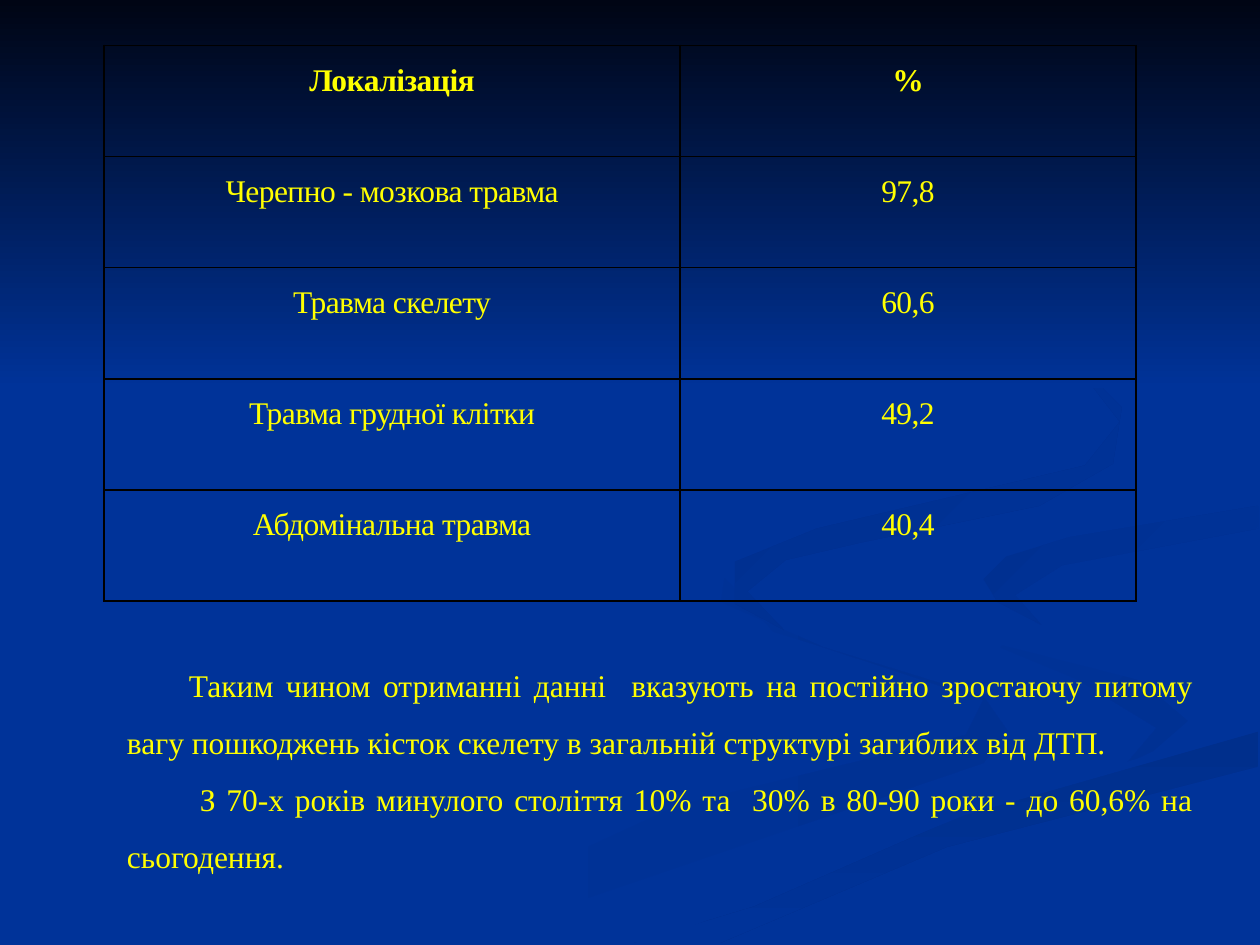
from lxml.etree import SubElement
from pptx import Presentation
from pptx.dml.color import RGBColor
from pptx.enum.text import MSO_AUTO_SIZE, PP_ALIGN
from pptx.oxml.ns import qn
from pptx.util import Pt

BLUE = RGBColor(0x00, 0x33, 0x99)
NIGHT = RGBColor(0x00, 0x05, 0x14)
DIM = RGBColor(0x00, 0x31, 0x93)
DEEP = RGBColor(0x00, 0x2F, 0x8C)
SHADE = RGBColor(0x00, 0x30, 0x91)
DUSK = RGBColor(0x00, 0x2F, 0x8E)
YELLOW = RGBColor(0xFF, 0xFF, 0x00)
BLACK = RGBColor(0x00, 0x00, 0x00)
FONT = "Times New Roman"

ROWS = [
    ("Локалізація", "%"),
    ("Черепно - мозкова травма", "97,8"),
    ("Травма скелету", "60,6"),
    ("Травма грудної клітки", "49,2"),
    ("Абдомінальна травма", "40,4"),
]
NOTES = [
    "Таким чином отриманні данні  вказують на постійно зростаючу питому вагу "
    "пошкоджень кісток скелету в загальній структурі загиблих від ДТП.",
    " З 70-х років минулого століття 10% та  30% в 80-90 роки - до 60,6% на сьогодення.",
]

SWIRLS = [
    (BLUE, DIM, 0, [
        (562, 398), (442, 361), (414, 330), (412, 344), (471, 370), (562, 400),
        (552, 420), (388, 460), (216, 539), (260, 539), (562, 436), (576, 418)]),
    (BLUE, DIM, 45, [
        (679, 410), (652, 389), (546, 362), (521, 334), (528, 352), (615, 388),
        (661, 416), (644, 436), (677, 421)]),
    (DEEP, BLUE, 90, [
        (362, 539), (411, 539), (541, 484), (719, 438), (719, 418), (550, 466),
        (431, 518)]),
    (BLUE, BLUE, 0, [
        (522, 334), (546, 359), (652, 389), (679, 412), (656, 432), (477, 481),
        (343, 539), (374, 538), (551, 466), (719, 418), (719, 387), (579, 349),
        (562, 333), (592, 312), (719, 289), (719, 279), (544, 311)]),
    (SHADE, BLUE, 45, [
        (562, 331), (570, 344), (595, 357), (580, 340), (607, 323), (719, 302),
        (719, 289), (611, 307), (575, 318)]),
    (DUSK, BLUE, 45, [
        (492, 310), (594, 289), (636, 265), (641, 233), (607, 198), (549, 168),
        (609, 201), (640, 241), (620, 266), (467, 302), (420, 321), (420, 345),
        (448, 360), (427, 338), (449, 320)]),
    (NIGHT, BLUE, 90, [(0, 0), (0, 222), (720, 222), (720, 0)]),
]


def draw(slide, start, end, angle, dots):
    path = slide.shapes.build_freeform(*dots[0], scale=Pt(1))
    path.add_line_segments(dots[1:], close=True)
    shape = path.convert_to_shape()
    shape.shadow.inherit = False
    shape.line.fill.background()
    if start == end:
        shape.fill.solid()
        shape.fill.fore_color.rgb = start
        return
    shape.fill.gradient()
    shape.fill.gradient_angle = -angle % 360
    for stop, color in zip(shape.fill.gradient_stops, (start, end)):
        stop.color.rgb = color


def style(para, align, bold=False):
    para.alignment = align
    para.line_spacing = 1.5
    for run in para.runs:
        run.font.size = Pt(18)
        run.font.name = FONT
        run.font.bold = bold
        run.font.color.rgb = YELLOW


def edge(cell):
    props = cell._tc.get_or_add_tcPr()
    for i, side in enumerate("LRTB"):
        line = SubElement(props, qn(f"a:ln{side}"), w=str(Pt(1)))
        fill = SubElement(line, qn("a:solidFill"))
        SubElement(fill, qn("a:srgbClr"), val=str(BLACK))
        props.insert(i, line)


def add_grid(slide):
    frame = slide.shapes.add_table(
        len(ROWS), 2, Pt(59.5), Pt(26), Pt(589.7), Pt(317.5))
    table = frame.table
    table.first_row = table.horz_banding = False
    for col, width in zip(table.columns, (329.1, 260.6)):
        col.width = Pt(width)
    for r, row in enumerate(ROWS):
        table.rows[r].height = Pt(63.5)
        for c, text in enumerate(row):
            cell = table.cell(r, c)
            cell.margin_left = cell.margin_right = Pt(5)
            cell.margin_top = cell.margin_bottom = Pt(0)
            cell.fill.background()
            edge(cell)
            cell.text_frame.text = text
            para = cell.text_frame.paragraphs[0]
            style(para, PP_ALIGN.CENTER, r == 0)
            para.space_after = Pt(10)
            for run in para.runs:
                run.font._element.set("spc", "-30")


def add_notes(slide):
    box = slide.shapes.add_textbox(Pt(65.5), Pt(366.5), Pt(623.5), Pt(138))
    frame = box.text_frame
    frame.word_wrap = True
    frame.auto_size = MSO_AUTO_SIZE.SHAPE_TO_FIT_TEXT
    frame.text = "\n".join(NOTES)
    for para in frame.paragraphs:
        style(para, PP_ALIGN.JUSTIFY)
        para._p.get_or_add_pPr().set("indent", str(Pt(35.4)))


def main():
    deck = Presentation()
    deck.slide_width, deck.slide_height = Pt(720), Pt(540)
    slide = deck.slides.add_slide(deck.slide_layouts[6])
    slide.background.fill.solid()
    slide.background.fill.fore_color.rgb = BLUE
    for swirl in SWIRLS:
        draw(slide, *swirl)
    add_grid(slide)
    add_notes(slide)
    deck.save("out.pptx")


if __name__ == "__main__":
    main()
